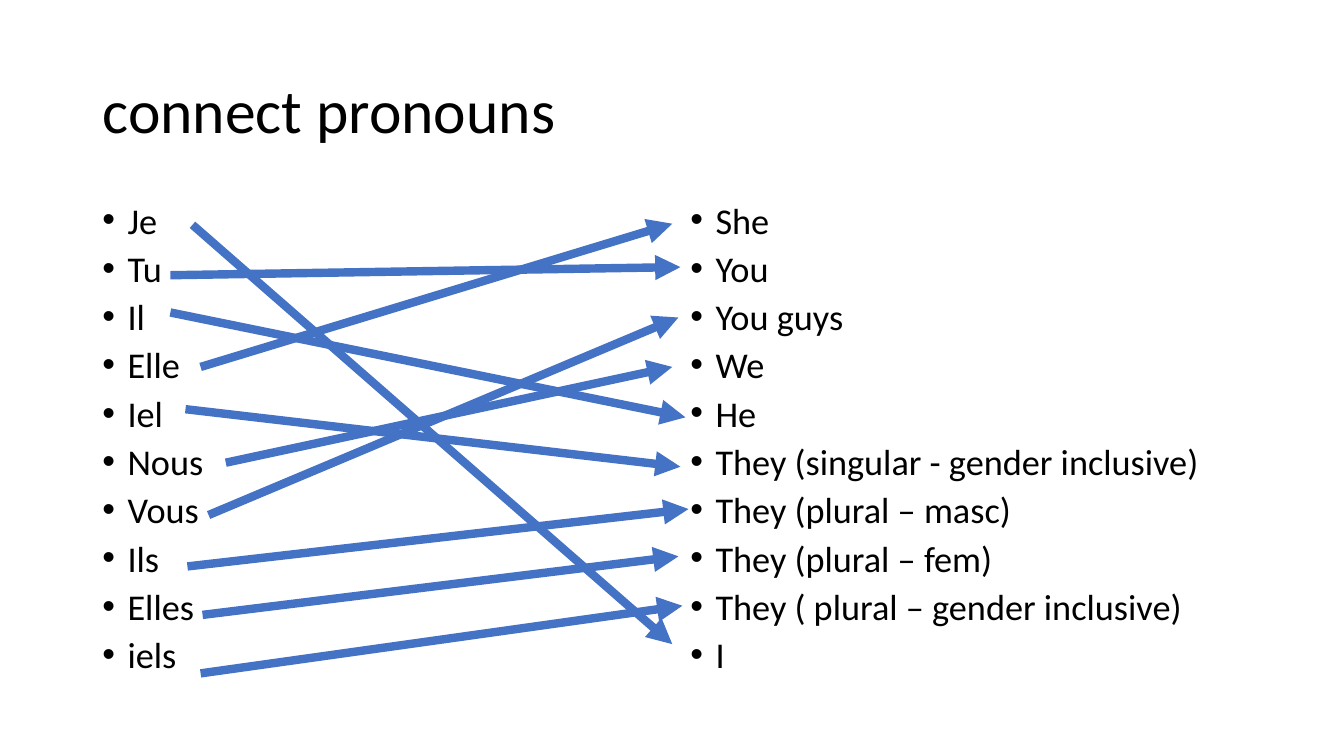
from dataclasses import dataclass

from lxml.etree import SubElement
from pptx import Presentation
from pptx.dml.color import RGBColor
from pptx.enum.shapes import MSO_CONNECTOR
from pptx.enum.text import MSO_ANCHOR, MSO_AUTO_SIZE, PP_ALIGN
from pptx.oxml.ns import qn
from pptx.util import Pt


@dataclass(frozen=True)
class Theme:
    face: str = "Calibri"
    ink: RGBColor = RGBColor(0, 0, 0)
    line: RGBColor = RGBColor(0x44, 0x72, 0xC4)
    head: float = 44
    body: float = 25.9
    width: float = 6


THEME = Theme()

# French words, each with its arrow: start x, y and end x, y
FRENCH = {
    "Je": (137.5, 160.6, 480.2, 460.1),
    "Tu": (121.7, 196.6, 486, 190.8),
    "Il": (121.7, 223.2, 489.6, 298.1),
    "Elle": (143.3, 262.1, 480.2, 159.8),
    "Iel": (132.5, 292.3, 486, 333.4),
    "Nous": (161.3, 330.5, 480.2, 262.1),
    "Vous": (149, 367.9, 484.6, 226.8),
    "Ils": (133.9, 404.6, 491.8, 363.6),
    "Elles": (144.7, 439.2, 484.6, 397.4),
    "iels": (143.3, 481, 487.4, 432.7),
}
ENGLISH = [
    "She",
    "You",
    "You guys",
    "We",
    "He",
    "They (singular - gender inclusive)",
    "They (plural – masc)",
    "They (plural – fem)",
    "They ( plural – gender inclusive)",
    "I",
]


def apply(item, values):
    for name, value in values.items():
        setattr(item, name, value)


def style(para, size):
    apply(para.font, {"name": THEME.face, "size": Pt(size), "bold": False})
    para.font.color.rgb = THEME.ink


def add_title(slide, text):
    title = slide.shapes.title
    apply(title, {"left": Pt(66), "top": Pt(28.75),
                  "width": Pt(828), "height": Pt(104.4)})
    frame = title.text_frame
    frame.text = text
    apply(frame, {"vertical_anchor": MSO_ANCHOR.MIDDLE, "word_wrap": True,
                  "auto_size": MSO_AUTO_SIZE.NONE})
    para = frame.paragraphs[0]
    apply(para, {"alignment": PP_ALIGN.LEFT, "line_spacing": 0.9})
    style(para, THEME.head)


def add_list(slide, left, height, words):
    box = slide.shapes.add_textbox(Pt(left), Pt(143.75), Pt(408), Pt(height))
    frame = box.text_frame
    frame.word_wrap = True
    for row, word in enumerate(words):
        para = frame.add_paragraph() if row else frame.paragraphs[0]
        para.text = word
        apply(para, {"line_spacing": 0.8, "space_before": Pt(9.6 if row else 0)})
        # Hanging bullet
        props = para._p.get_or_add_pPr()
        props.set("marL", str(Pt(18)))
        props.set("indent", str(Pt(-18)))
        SubElement(props, qn("a:buFont"), typeface="Arial")
        SubElement(props, qn("a:buChar"), char="•")
        style(para, THEME.body)


def add_arrow(slide, ends):
    arrow = slide.shapes.add_connector(
        MSO_CONNECTOR.STRAIGHT, *(Pt(end) for end in ends))
    arrow.line.width = Pt(THEME.width)
    arrow.line.color.rgb = THEME.line
    SubElement(arrow.line._get_or_add_ln(), qn("a:tailEnd"), type="triangle")
    SubElement(arrow._element.spPr, qn("a:effectLst"))


def main():
    deck = Presentation()
    apply(deck, {"slide_width": Pt(960), "slide_height": Pt(540)})
    slide = deck.slides.add_slide(deck.slide_layouts[5])

    # Title and the two word lists
    add_title(slide, "connect pronouns")
    add_list(slide, 66, 373.7, FRENCH)
    add_list(slide, 486, 378.7, ENGLISH)

    # Matching arrows
    for ends in FRENCH.values():
        add_arrow(slide, ends)

    deck.save("out.pptx")


if __name__ == "__main__":
    main()
